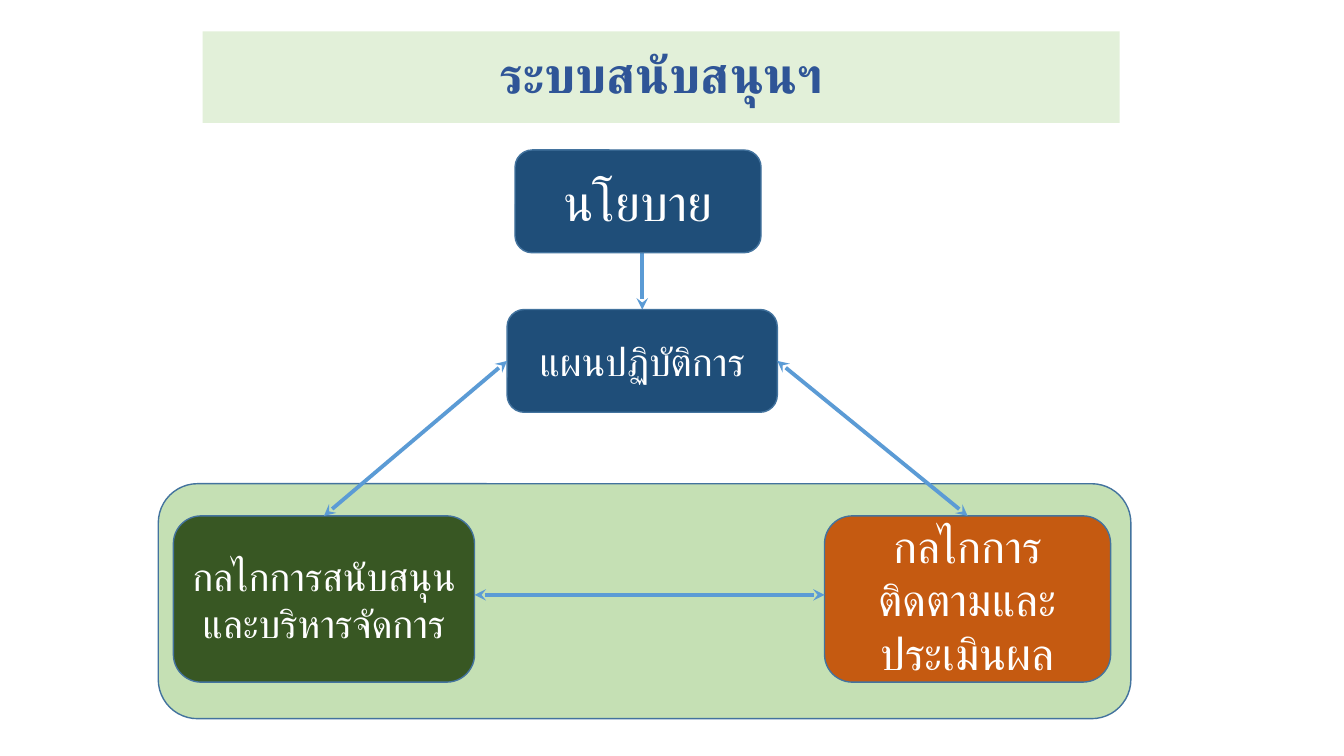
"""Build a one-slide diagram of a support system: policy, plan and two mechanisms."""
from lxml.etree import SubElement
from pptx import Presentation
from pptx.dml.color import RGBColor
from pptx.enum.shapes import MSO_CONNECTOR as Line, MSO_SHAPE as Shape
from pptx.enum.text import MSO_ANCHOR as Anchor, PP_ALIGN as Align
from pptx.oxml.ns import qn
from pptx.util import Cm, Pt

TITLE = "ระบบสนับสนุนฯ"
TITLE_AREA = (5.11, 0.79, 23.11, 2.31)
PANEL_AREA = (3.99, 12.19, 24.51, 5.92)
BOXES = {
    "policy": ("นโยบาย", (12.98, 3.78, 6.2, 2.59), "blue", "large"),
    "plan": ("แผนปฏิบัติการ", (12.78, 7.8, 6.81, 2.59), "blue", "small"),
    "support": ("กลไกการสนับสนุน และบริหารจัดการ", (4.37, 13, 7.59, 4.19), "green", "small"),
    "monitor": ("กลไกการติดตามและประเมินผล", (20.78, 13, 7.21, 4.19), "orange", "medium"),
}
POLICY_ARROW_TOP = 4.19
MECHANISM_ARROW_LEVEL = 14.99

THEME = {
    "font": "Cabin",
    "colors": {
        "title": "2F5597", "title_fill": "E2F0D9", "panel": "C5E0B4",
        "blue": "1F4E79", "green": "385723", "orange": "C55A11",
        "text": "FFFFFF", "outline": "43739E", "arrow": "5B9BD5",
    },
    "sizes": {"large": 36, "medium": 32, "small": 28},
    "outline": 1,
    "arrow": 2.75,
}


def color(name):
    return RGBColor.from_string(THEME["colors"][name])


def add_box(slide, kind, area, fill, outlined=True):
    box = slide.shapes.add_shape(kind, *map(Cm, area))
    box.shadow.inherit = False
    box.fill.solid()
    box.fill.fore_color.rgb = color(fill)
    if outlined:
        box.line.color.rgb = color("outline")
        box.line.width = Pt(THEME["outline"])
    else:
        box.line.fill.background()
    return box


def write(box, text, size, ink="text", bold=False):
    frame = box.text_frame
    frame.word_wrap = True
    frame.vertical_anchor = Anchor.MIDDLE
    para = frame.paragraphs[0]
    para.text = text
    para.alignment = Align.CENTER
    font = para.font
    font.name = THEME["font"]
    font.size = Pt(THEME["sizes"][size])
    font.bold = bold
    font.color.rgb = color(ink)
    defaults = para._p.pPr.find(qn("a:defRPr"))
    SubElement(defaults, qn("a:cs"), typeface=THEME["font"])
    return para


def add_arrow(slide, start, end):
    arrow = slide.shapes.add_connector(Line.STRAIGHT, *map(Cm, start + end))
    arrow.line.color.rgb = color("arrow")
    arrow.line.width = Pt(THEME["arrow"])
    outline = arrow.line._get_or_add_ln()
    for tip in ("a:headEnd", "a:tailEnd"):
        SubElement(outline, qn(tip), type="stealth")
    SubElement(arrow._element.spPr, qn("a:effectLst"))


def point(name, across, down):
    left, top, width, height = BOXES[name][1]
    return left + across * width, top + down * height


def main():
    deck = Presentation()
    deck.slide_width, deck.slide_height = Cm(33.87), Cm(19.05)
    slide = deck.slides.add_slide(deck.slide_layouts[6])

    title = add_box(slide, Shape.RECTANGLE, TITLE_AREA, "title_fill", outlined=False)
    write(title, TITLE, "large", "title", bold=True).line_spacing = 0.9
    add_box(slide, Shape.ROUNDED_RECTANGLE, PANEL_AREA, "panel")

    plan_top = point("plan", 0.5, 0)
    add_arrow(slide, (plan_top[0], POLICY_ARROW_TOP), plan_top)
    for text, area, fill, size in BOXES.values():
        write(add_box(slide, Shape.ROUNDED_RECTANGLE, area, fill), text, size)

    for mechanism, side in (("support", 0), ("monitor", 1)):
        add_arrow(slide, point("plan", side, 0.5), point(mechanism, 0.5, 0))
    support_right, monitor_left = point("support", 1, 0)[0], point("monitor", 0, 0)[0]
    add_arrow(slide, (support_right, MECHANISM_ARROW_LEVEL), (monitor_left, MECHANISM_ARROW_LEVEL))

    deck.save("out.pptx")


if __name__ == "__main__":
    main()
